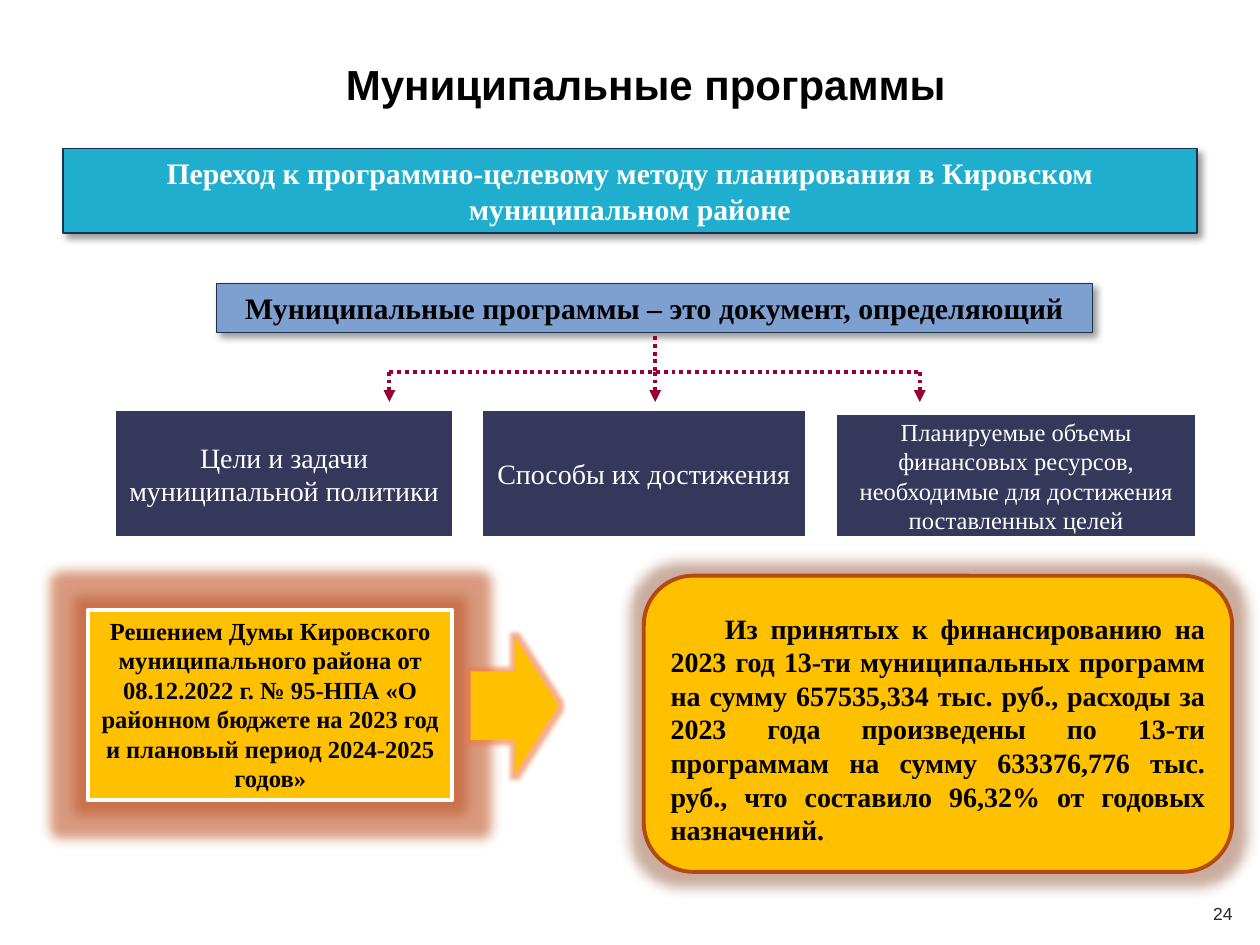
"""Build the slide on municipal programmes and their financing."""
from lxml import etree
from pptx import Presentation
from pptx.dml.color import RGBColor
from pptx.enum.dml import MSO_LINE
from pptx.enum.shapes import MSO_CONNECTOR, MSO_SHAPE
from pptx.enum.text import MSO_ANCHOR, PP_ALIGN
from pptx.oxml.ns import qn
from pptx.util import Pt

COLORS = {
    "black": "000000", "white": "FFFFFF", "number": "262626", "teal": "1FAECD",
    "blue": "7DA0D0", "edge": "1C314E", "navy": "35385A", "crimson": "990033",
    "gold": "FFC000", "rust": "B54A10", "orange_glow": "C0582A",
    "arrow_glow": "F07840", "brown_glow": "8B4A2B",
}
SERIF = "Times New Roman"

LABELS = [
    ("Муниципальные программы", (36, 13, 666, 69.8), 24, "black", True),
    ("24", (680.4, 507.6, 36.7, 28.8), 10, "number", False),
]
BANNERS = [
    ("Переход к программно-целевому методу планирования в Кировском муниципальном районе",
     (36, 85, 648, 48.2), "teal", "white"),
    ("Муниципальные программы – это документ, определяющий",
     (123.8, 162, 500.4, 28.1), "blue", "black"),
]
CONTENTS = [
    ("Цели и задачи муниципальной политики", (65.5, 234, 193.7, 73.4), 16),
    ("Способы их достижения", (275, 234, 185.8, 73.4), 16),
    ("Планируемые объемы финансовых ресурсов, необходимые для достижения поставленных целей",
     (477.4, 236.2, 206.6, 71.2), 14),
]
DECISION = ("Решением Думы Кировского муниципального района от 08.12.2022 г. № 95-НПА «О районном "
            "бюджете на 2023 год и плановый период 2024-2025 годов»")
RESULT = ("Из принятых к финансированию на 2023 год 13-ти муниципальных программ на сумму "
          "657535,334 тыс. руб., расходы за 2023 года произведены по 13-ти программам на сумму "
          "633376,776 тыс. руб., что составило 96,32% от годовых назначений.")
BRANCHES = (222.5, 374.4, 525.6)
STEM_TOP, BRANCH_Y, TIP_Y = 192, 212.4, 229.7


def rgb(name):
    return RGBColor.from_string(COLORS[name])


def write(shape, text, size, color, font=SERIF, bold=False,
          align=PP_ALIGN.CENTER, anchor=MSO_ANCHOR.MIDDLE):
    frame = shape.text_frame
    frame.word_wrap = True
    frame.vertical_anchor = anchor
    frame.text = text
    paragraph = frame.paragraphs[0]
    paragraph.alignment = align
    for run in paragraph.runs:
        run.font.name, run.font.size, run.font.bold = font, Pt(size), bold
        run.font.color.rgb = rgb(color)


def add_block(slide, kind, place, fill, edge=None, width=0):
    shape = slide.shapes.add_shape(kind, *map(Pt, place))
    shape.shadow.inherit = False
    shape.fill.solid()
    shape.fill.fore_color.rgb = rgb(fill)
    if edge:
        shape.line.color.rgb = rgb(edge)
        shape.line.width = Pt(width)
    else:
        shape.line.fill.background()
    return shape


def add_effect(shape, kind, color, alpha, **attributes):
    effects = shape._element.spPr.find(qn("a:effectLst"))
    effect = etree.SubElement(effects, qn(f"a:{kind}"),
                              {key: str(int(value)) for key, value in attributes.items()})
    tint = etree.SubElement(effect, qn("a:srgbClr"), val=COLORS[color])
    etree.SubElement(tint, qn("a:alpha"), val=str(alpha * 1000))


def add_dotted(slide, start, end, arrow=False):
    line = slide.shapes.add_connector(MSO_CONNECTOR.STRAIGHT, *map(Pt, start + end))
    line.line.color.rgb = rgb("crimson")
    line.line.width = Pt(2.25)
    line.line.dash_style = MSO_LINE.ROUND_DOT
    if arrow:
        etree.SubElement(line.line._get_or_add_ln(), qn("a:tailEnd"), type="triangle")
    etree.SubElement(line._element.spPr, qn("a:effectLst"))


def main():
    deck = Presentation()
    deck.slide_width, deck.slide_height = Pt(720), Pt(540)
    slide = deck.slides.add_slide(deck.slide_layouts[6])

    for text, place, size, color, bold in LABELS:
        label = slide.shapes.add_textbox(*map(Pt, place))
        write(label, text, size, color, "Arial", bold)

    for text, place, fill, color in BANNERS:
        banner = add_block(slide, MSO_SHAPE.RECTANGLE, place, fill, "edge", 0.75)
        add_effect(banner, "outerShdw", "black", 40,
                   blurRad=Pt(4), dist=Pt(3), dir=45 * 60000)
        write(banner, text, 17, color, bold=True, anchor=MSO_ANCHOR.TOP)

    add_dotted(slide, (BRANCHES[0], BRANCH_Y), (BRANCHES[-1], BRANCH_Y))
    add_dotted(slide, (BRANCHES[1], STEM_TOP), (BRANCHES[1], BRANCH_Y))
    for x in BRANCHES:
        add_dotted(slide, (x, BRANCH_Y), (x, TIP_Y), arrow=True)

    for text, place, size in CONTENTS:
        content = add_block(slide, MSO_SHAPE.RECTANGLE, place, "navy", "white", 2)
        write(content, text, size, "white")

    decision = add_block(slide, MSO_SHAPE.RECTANGLE, (50.4, 348.5, 208.1, 108.7),
                         "gold", "white", 2.25)
    add_effect(decision, "glow", "orange_glow", 60, rad=Pt(14))
    write(decision, DECISION, 14, "black", bold=True, anchor=MSO_ANCHOR.TOP)

    arrow = add_block(slide, MSO_SHAPE.RIGHT_ARROW, (268.9, 364, 50.4, 78.5), "gold")
    add_effect(arrow, "glow", "arrow_glow", 60, rad=Pt(5))

    result = add_block(slide, MSO_SHAPE.ROUNDED_RECTANGLE, (367.9, 329, 336.2, 169.2),
                       "gold", "rust", 2.25)
    add_effect(result, "glow", "brown_glow", 45, rad=Pt(14))
    write(result, RESULT, 16, "black", bold=True,
          align=PP_ALIGN.JUSTIFY, anchor=MSO_ANCHOR.TOP)
    result.text_frame.margin_top = Pt(12)
    result.text_frame.paragraphs[0]._p.get_or_add_pPr().set("indent", str(Pt(31)))

    deck.save("out.pptx")


if __name__ == "__main__":
    main()
